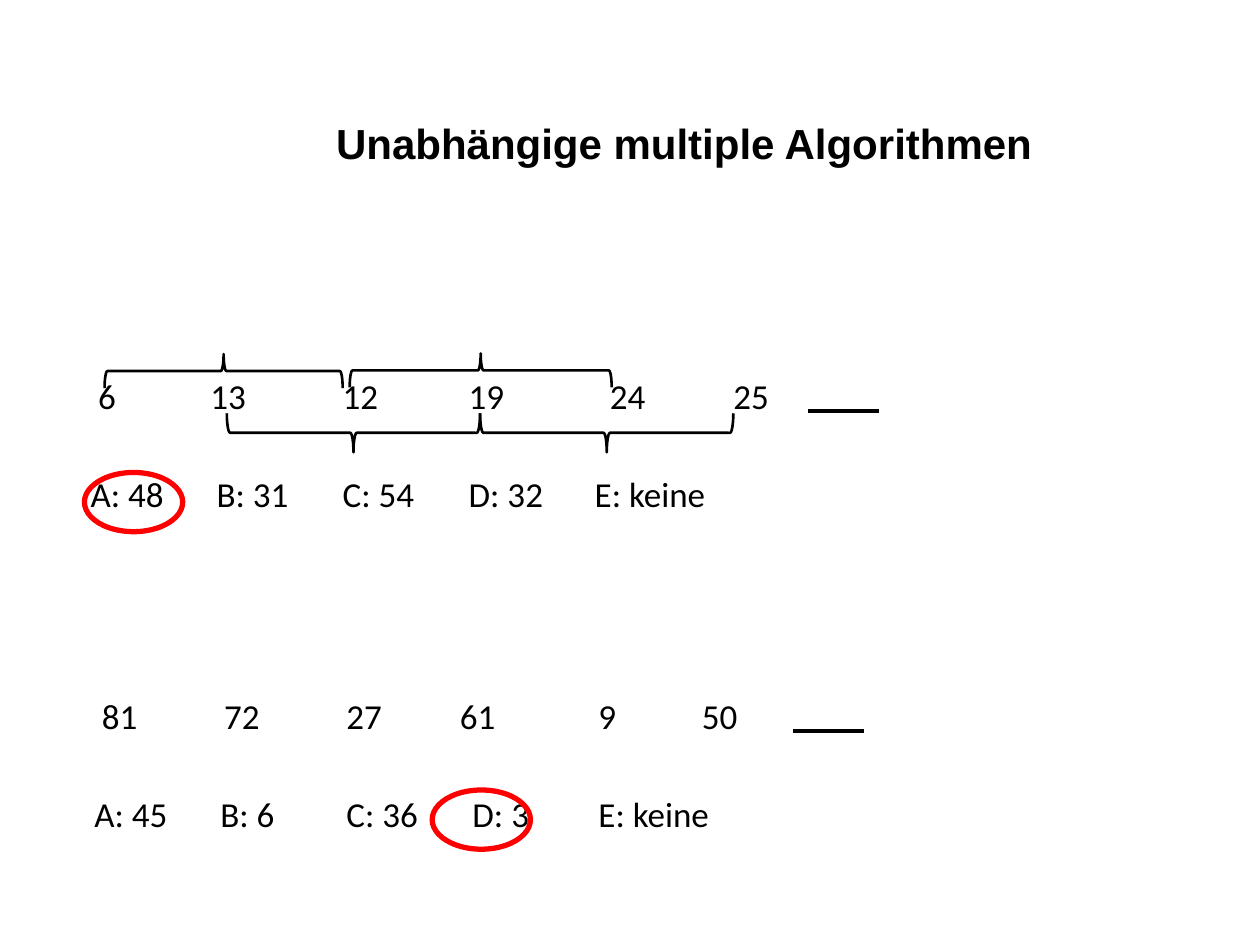
from lxml.etree import SubElement
from pptx import Presentation
from pptx.dml.color import RGBColor
from pptx.enum.shapes import MSO_CONNECTOR, MSO_SHAPE
from pptx.enum.text import PP_ALIGN
from pptx.oxml.ns import qn
from pptx.util import Inches, Pt

BLACK = RGBColor(0, 0, 0)
RED = RGBColor(255, 0, 0)
BODY = {"name": "Calibri", "size": Pt(20)}
HEAD = {"name": "Arial", "size": Pt(24), "bold": True}
GRID = [1, 2, 3, 4]  # tab stops of the answers

# place, top inset, number tab stops, numbers, answers
TASKS = [
    ((0.5, 1.75), 1.22, [0.06, 0.95, 2, 3, 4.12, 5.1],
     ["6", "13", "12", "19", "24", "25"],
     ["A: 48", "B: 31", "C: 54", "D: 32", "E: keine"]),
    ((0.53, 4.67), 0.84, [0.06, 1.03, 2, 2.9, 4, 4.82],
     ["81", "72", "27", "61", "9", "50"],
     ["A: 45", "B: 6", "C: 36", "D: 3", "E: keine"]),
]
# left, top, width, height before the turn; whether it points up
BRACES = [
    (1.64, 2, 0.27, 1.89, True),
    (2.65, 2.43, 0.31, 2.01, False),
    (3.68, 1.9, 0.27, 2.08, True),
    (4.66, 2.43, 0.31, 2.01, False),
]
RINGS = [(0.67, 3.75), (3.43, 6.27)]
GAPS = [(6.41, 3.26), (6.29, 5.8)]


def add_run(para, text, form):
    run = para.add_run()
    run.text = text
    run.font.color.rgb = BLACK
    for key, value in form.items():
        setattr(run.font, key, value)


def add_frame(slide, *box):
    frame = slide.shapes.add_textbox(*map(Inches, box)).text_frame
    frame.word_wrap = True
    return frame


def add_tabs(para, stops):
    tabs = SubElement(para._p.get_or_add_pPr(), qn("a:tabLst"))
    for stop in stops:
        SubElement(tabs, qn("a:tab"), pos=str(Inches(stop)), algn="l")


def add_task(slide, place, inset, stops, numbers, answers):
    frame = add_frame(slide, *place, 8.33, 2.71)
    frame.margin_left = Inches(0.22)
    frame.margin_top = Inches(inset)
    row = frame.paragraphs[0]
    add_tabs(row, stops)
    add_run(row, "\t" + "\t".join(numbers), BODY)
    row = frame.add_paragraph()
    add_tabs(row, GRID)
    row.space_before = Pt(32)
    add_run(row, "\t".join(answers), BODY)


def add_outline(slide, kind, box, color, width):
    shape = slide.shapes.add_shape(kind, *map(Inches, box))
    shape.shadow.inherit = False
    shape.fill.background()
    shape.line.color.rgb = color
    shape.line.width = Pt(width)
    return shape


def add_brace(slide, *box, up):
    brace = add_outline(slide, MSO_SHAPE.RIGHT_BRACE, box, BLACK, 1.5)
    brace.rotation = 90
    if up:
        brace._element.spPr.find(qn("a:xfrm")).set("flipH", "1")


def add_gap(slide, left, top):
    """Draw the line that stands for the missing number."""
    ends = map(Inches, (left, top, left + 0.57, top))
    line = slide.shapes.add_connector(MSO_CONNECTOR.STRAIGHT, *ends)
    line.line.color.rgb = BLACK
    line.line.width = Pt(2.5)
    SubElement(line._element.spPr, qn("a:effectLst"))


def add_title(slide, text):
    para = add_frame(slide, 2.4, 0.88, 6.06, 0.5).paragraphs[0]
    para.alignment = PP_ALIGN.CENTER
    add_run(para, text, HEAD)


def main():
    deck = Presentation()
    deck.slide_width, deck.slide_height = Inches(10), Inches(7.5)
    slide = deck.slides.add_slide(deck.slide_layouts[6])
    for task in TASKS:
        add_task(slide, *task)
    for place in RINGS:
        add_outline(slide, MSO_SHAPE.OVAL, (*place, 0.78, 0.47), RED, 3)
    for *box, up in BRACES:
        add_brace(slide, *box, up=up)
    for place in GAPS:
        add_gap(slide, *place)
    add_title(slide, "Unabhängige multiple Algorithmen")
    deck.save("out.pptx")


if __name__ == "__main__":
    main()
